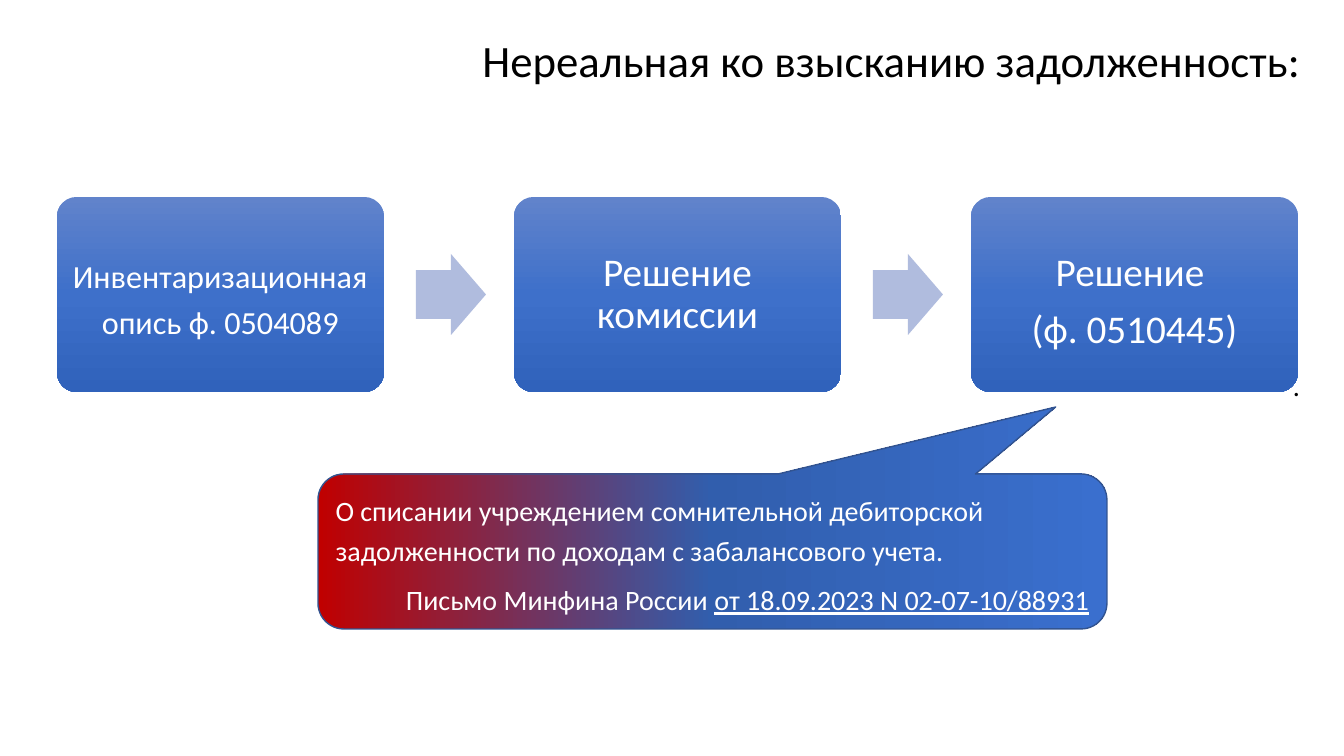
"""Build the slide on writing off uncollectible debt."""
from lxml import etree
from pptx import Presentation
from pptx.dml.color import RGBColor
from pptx.enum.shapes import MSO_SHAPE
from pptx.enum.text import MSO_ANCHOR, PP_ALIGN
from pptx.oxml import parse_xml
from pptx.oxml.ns import nsdecls, qn
from pptx.util import Pt

PX = 914400 / 100.8
LEFT, CENTER, RIGHT = PP_ALIGN.LEFT, PP_ALIGN.CENTER, PP_ALIGN.RIGHT
MIDDLE = MSO_ANCHOR.MIDDLE
RECTANGLE, ROUNDED = MSO_SHAPE.RECTANGLE, MSO_SHAPE.ROUNDED_RECTANGLE
ARROW, CALLOUT = MSO_SHAPE.RIGHT_ARROW, MSO_SHAPE.ROUNDED_RECTANGULAR_CALLOUT
CARD_COLORS = ("6183CB", "3E70CA", "3062BB")
CALLOUT_COLORS = ("C00000", "315EAD", "3A6FCE")


def add_box(kind, bounds, colors, angle=0, adjustments=()):
    """Add a shape filled with one colour or an even three-colour gradient."""
    box = page.shapes.add_shape(kind, *(round(value * PX) for value in bounds))
    box.shadow.inherit = False
    box.line.fill.background()
    for index, value in enumerate(adjustments):
        box.adjustments[index] = value
    if len(colors) == 1:
        box.fill.solid()
        box.fill.fore_color.rgb = RGBColor.from_string(colors[0])
    else:
        stops = "".join(
            f'<a:gs pos="{index * 50000}"><a:srgbClr val="{color}"/></a:gs>'
            for index, color in enumerate(colors))
        gradient = parse_xml(
            f'<a:gradFill {nsdecls("a")} rotWithShape="1"><a:gsLst>{stops}</a:gsLst>'
            f'<a:lin ang="{angle * 60000}" scaled="0"/></a:gradFill>')
        box.element.spPr.find(qn("a:prstGeom")).addnext(gradient)
    return box


def write(box, paragraphs, size, spacing, color="FFFFFF", inset=10):
    """Fill a box with paragraphs, each an alignment and its (text, underline) spans."""
    frame = box.text_frame
    margins = {"margin_left": inset, "margin_right": inset,
               "margin_top": 5, "margin_bottom": 5}
    for name, value in margins.items():
        setattr(frame, name, round(value * PX))
    frame.word_wrap = True
    frame.vertical_anchor = MIDDLE
    for index, (alignment, spans) in enumerate(paragraphs):
        para = frame.add_paragraph() if index else frame.paragraphs[0]
        para.alignment = alignment
        para.line_spacing = spacing
        para.space_before = Pt(6 if index else 0)
        for text, underline in spans:
            for line_number, line in enumerate(text.split("\n")):
                if line_number:
                    para.add_line_break()
                span = para.add_run()
                span.text = line
                formats = {"name": "Calibri", "size": Pt(size), "underline": underline}
                for name, value in formats.items():
                    setattr(span.font, name, value)
                span.font.color.rgb = RGBColor.from_string(color)


deck = Presentation()
deck.slide_width, deck.slide_height = round(1344 * PX), round(756 * PX)
page = deck.slides.add_slide(deck.slide_layouts[6])

title = page.shapes.add_textbox(*(round(value * PX) for value in (333, 29, 978, 68)))
write(title, [(RIGHT, [("Нереальная ко взысканию задолженность:", None)])],
      32, 0.9, "000000")

body = add_box(RECTANGLE, (44, 144, 1266, 475), ["FFFFFF"])
white = body.element.spPr.find(qn("a:solidFill"))[0]
etree.SubElement(white, qn("a:alpha"), val="81000")
write(body, [(RIGHT, [(".", None)])], 20, 1.2, "000000")

cards = [
    ("Инвентаризационная опись ф. 0504089", 23, 1.2),
    ("Решение комиссии", 28, 0.9),
    ("Решение \n(ф. 0510445)", 28, 1.2),
]
for index, (text, size, spacing) in enumerate(cards):
    left = 57 + index * 457
    if index:
        add_box(ARROW, (left - 98, 254, 70, 81), ["B0BCDE"], adjustments=(0.6, 0.5))
    card = add_box(ROUNDED, (left, 197, 327, 195), CARD_COLORS, 90, (0.1,))
    write(card, [(CENTER, [(text, None)])], size, spacing, inset=6)

callout = add_box(CALLOUT, (318, 474, 789, 155), CALLOUT_COLORS,
                  adjustments=(0.435, -0.932, 0.167))
callout.line.color.rgb = RGBColor.from_string("325491")
callout.line.width = Pt(1)
write(callout, [
    (LEFT, [("О списании учреждением сомнительной дебиторской "
             "задолженности по доходам с забалансового учета.", None)]),
    (RIGHT, [("Письмо Минфина России ", None),
             ("от 18.09.2023 N 02-07-10/88931", True)]),
], 20, 1.2)

deck.save("out.pptx")
